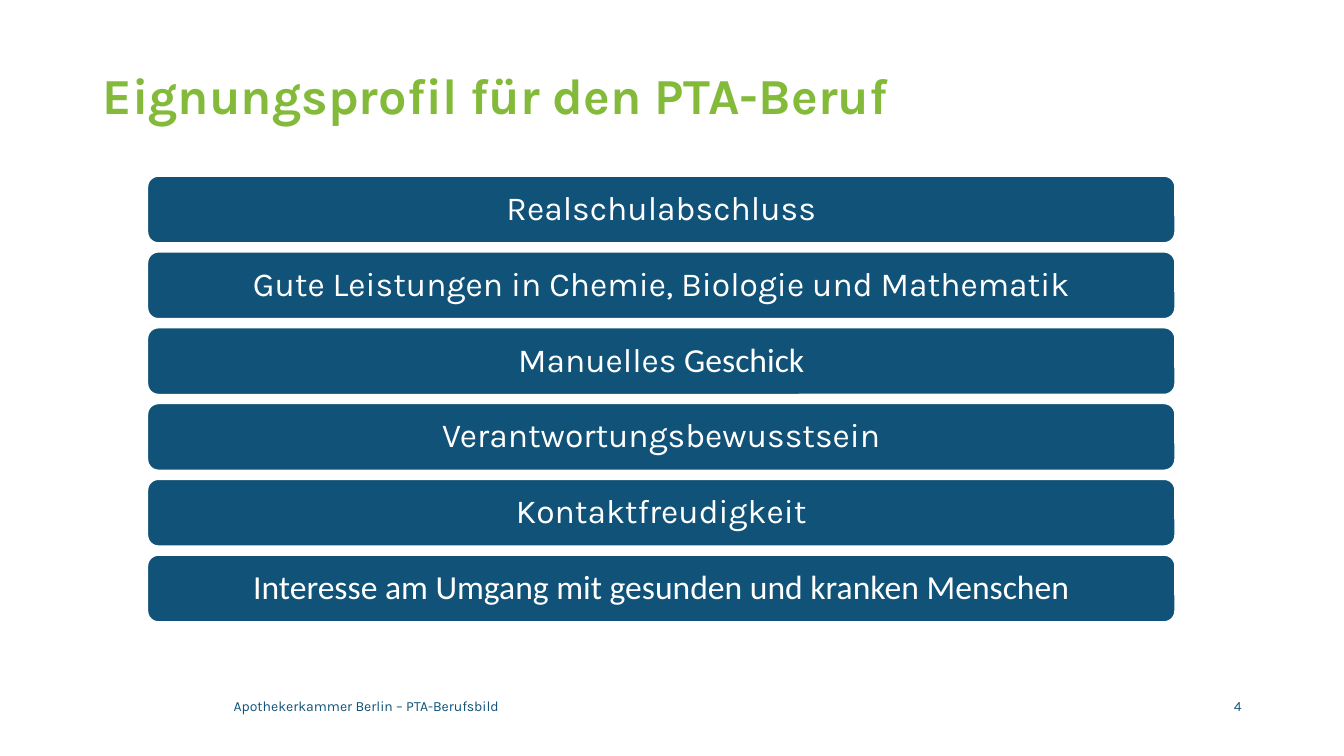
from pptx import Presentation
from pptx.dml.color import RGBColor
from pptx.enum.shapes import MSO_SHAPE as Shape
from pptx.enum.text import MSO_ANCHOR as Anchor, PP_ALIGN as Align
from pptx.util import Cm, Pt

COLORS = {"green": "83BA3A", "blue": "105278", "white": "FFFFFF"}
REQUIREMENTS = [
    [("Realschulabschluss", "Karla")],
    [("Gute Leistungen in Chemie, Biologie und Mathematik", "Karla")],
    [("Manuelles", "Karla"), (" Geschick", "Calibri")],
    [("Verantwortungsbewusstsein", "Karla")],
    [("Kontaktfreudigkeit", "Karla")],
    [("Interesse am Umgang mit gesunden und kranken Menschen", "Calibri")],
]


def color(name):
    """Return the palette colour with the given name."""
    return RGBColor.from_string(COLORS[name])


def set_font(font, size, color_name, family="Karla", bold=False):
    """Set the look of a font."""
    font.name = family
    font.size = Pt(size)
    font.bold = bold
    font.color.rgb = color(color_name)


def add_title(slide, left, top, width, height, text):
    """Place and format the title placeholder."""
    title = slide.shapes.title
    title.left, title.top, title.width, title.height = left, top, width, height
    frame = title.text_frame
    frame.text = text
    frame.vertical_anchor = Anchor.MIDDLE
    paragraph = frame.paragraphs[0]
    paragraph.alignment = Align.LEFT
    paragraph.line_spacing = 0.9
    set_font(paragraph.font, 36, "green", bold=True)


def add_requirements(slide, left, top, width, height, requirements):
    """Stack one rounded bar per requirement, evenly spaced in the box."""
    bar_height = Cm(1.7)
    pitch = (height - bar_height) / (len(requirements) - 1)
    for index, parts in enumerate(requirements):
        bar = slide.shapes.add_shape(
            Shape.ROUNDED_RECTANGLE, left, round(top + index * pitch), width, bar_height)
        bar.shadow.inherit = False
        bar.fill.solid()
        bar.fill.fore_color.rgb = color("blue")
        bar.line.color.rgb = color("white")
        bar.line.width = Pt(1.5)
        frame = bar.text_frame
        frame.word_wrap = True
        frame.vertical_anchor = Anchor.MIDDLE
        paragraph = frame.paragraphs[0]
        paragraph.alignment = Align.CENTER
        paragraph.line_spacing = 0.9
        for text, family in parts:
            run = paragraph.add_run()
            run.text = text
            set_font(run.font, 24, "white", family)


def add_footer(slide, left, top, width, height, text, number):
    """Place the footer text on the left and the slide number on the right."""
    number_width = Cm(3.66)
    text_width = width - number_width
    for offset, part_width, content, alignment in (
        (0, text_width, text, Align.LEFT),
        (text_width, number_width, number, Align.RIGHT),
    ):
        box = slide.shapes.add_textbox(left + offset, top, part_width, height)
        frame = box.text_frame
        frame.word_wrap = True
        frame.vertical_anchor = Anchor.MIDDLE
        frame.text = content
        paragraph = frame.paragraphs[0]
        paragraph.alignment = alignment
        set_font(paragraph.font, 10, "blue")


def main():
    """Build and save the presentation."""
    presentation = Presentation()
    presentation.slide_width, presentation.slide_height = Cm(33.87), Cm(19.05)
    slide = presentation.slides.add_slide(presentation.slide_layouts[5])
    add_title(slide, Cm(2.33), Cm(1.02), Cm(29.21), Cm(2.9),
              "Eignungsprofil für den PTA-Beruf")
    add_requirements(slide, Cm(3.71), Cm(4.43), Cm(25.91), Cm(11.25), REQUIREMENTS)
    add_footer(slide, Cm(5.64), Cm(17.27), Cm(25.9), Cm(1.02),
               "Apothekerkammer Berlin – PTA-Berufsbild", "4")
    presentation.save("out.pptx")


if __name__ == "__main__":
    main()
